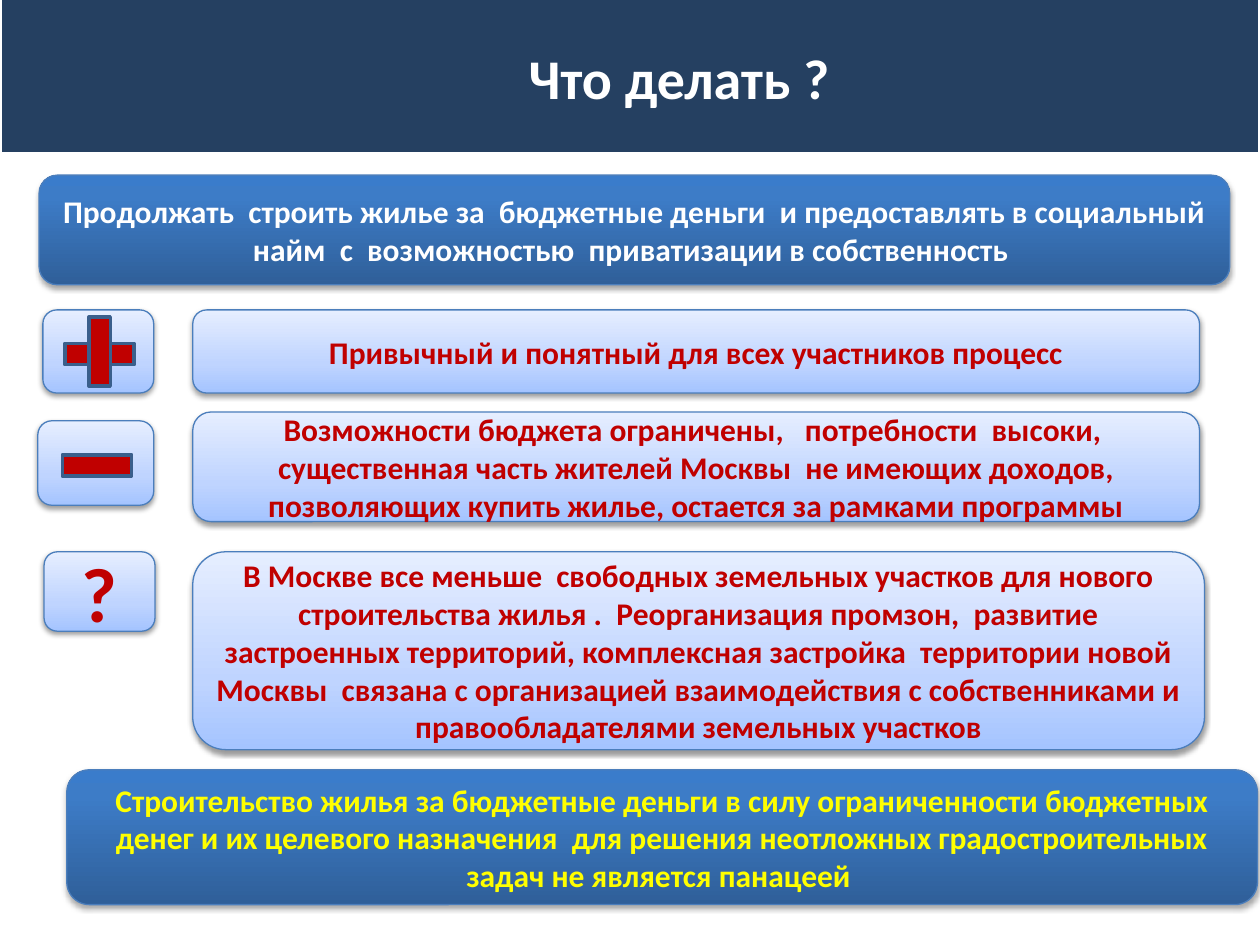
from lxml import etree
from pptx import Presentation
from pptx import util as u
from pptx.dml.color import RGBColor
from pptx.enum import shapes, text
from pptx.oxml import ns

COLORS = {
    "band": "254061", "white": "FFFFFF", "yellow": "FFFF00", "red": "C00000",
    "glyph_edge": "3A5F8C", "card_edge": "4B7EBC", "question_edge": "D73A36",
    "shadow": "000000",
}
# Gradient stops (percent, colour) from bottom to top, then shadow opacity and distance
BLUE = ([(0, "2F5F99"), (80, "3D7CC7"), (100, "3A7CCB")], 35, 1.8)
PALE = ([(0, "A4C4FF"), (35, "BFD4FF"), (100, "E6EEFF")], 38, 1.6)
FONT = "Calibri"
GLYPH_WIDTH, GLYPH_THICKNESS = 0.55, 0.17


def rgb(name):
    return RGBColor.from_string(COLORS[name])


def add_xml(parent, tag, **attributes):
    return etree.SubElement(parent, ns.qn(tag), attributes)


def add_color(parent, value):
    return add_xml(parent, "a:srgbClr", val=value)


def add_box(slide, preset, box, edge, edge_width):
    shape = slide.shapes.add_shape(preset, *map(u.Inches, box))
    shape.shadow.inherit = False
    shape.line.color.rgb = rgb(edge)
    shape.line.width = u.Pt(edge_width)
    return shape


def add_bar(slide, box, fill, edge):
    bar = add_box(slide, shapes.MSO_SHAPE.RECTANGLE, box, edge, 2)
    bar.fill.solid()
    bar.fill.fore_color.rgb = rgb(fill)
    return bar


def write(frame, words, color, size):
    frame.word_wrap = True
    frame.vertical_anchor = text.MSO_ANCHOR.MIDDLE
    paragraph = frame.paragraphs[0]
    paragraph.text = words
    paragraph.alignment = text.PP_ALIGN.CENTER
    font = paragraph.font
    font.name, font.size, font.bold = FONT, u.Pt(size), True
    font.color.rgb = rgb(color)
    return paragraph


def add_card(slide, box, style):
    """Rounded card with a vertical gradient and a soft shadow below."""
    stops, opacity, distance = style
    card = add_box(slide, shapes.MSO_SHAPE.ROUNDED_RECTANGLE, box, "card_edge", 0.75)
    card.fill.gradient()
    card.fill.gradient_angle = 90
    properties = card._element.spPr
    stop_list = properties.find(".//" + ns.qn("a:gsLst"))
    for old_stop in list(stop_list):
        stop_list.remove(old_stop)
    for percent, value in stops:
        add_color(add_xml(stop_list, "a:gs", pos=str(percent * 1000)), value)
    shadow = add_xml(properties.find(ns.qn("a:effectLst")), "a:outerShdw",
                     blurRad=str(u.Pt(3.1)), dist=str(u.Pt(distance)),
                     dir="5400000", rotWithShape="0")
    add_xml(add_color(shadow, COLORS["shadow"]), "a:alpha", val=str(opacity * 1000))
    return card


def add_header(slide, box, words):
    left, top, width, height = box
    band = add_bar(slide, box, "band", "white")
    title = slide.shapes.title
    title._element.addprevious(band._element)
    title.left, title.top = u.Inches(left + 1.06), u.Inches(top + 0.32)
    title.width, title.height = u.Inches(8.66), u.Inches(0.64)
    write(title.text_frame, words, "white", 32)


def add_banner(slide, box, words, color):
    write(add_card(slide, box, BLUE).text_frame, words, color, 18)


def add_minus(slide, box, rotation=0):
    left, top, width, height = box
    glyph_box = (left + (width - GLYPH_WIDTH) / 2 + 0.01,
                 top + (height - GLYPH_THICKNESS) / 2 + 0.02,
                 GLYPH_WIDTH, GLYPH_THICKNESS)
    add_bar(slide, glyph_box, "red", "glyph_edge").rotation = rotation


def add_plus(slide, box):
    left, top, width, height = box
    add_minus(slide, box)
    add_minus(slide, (left, top - 0.02, width, height), 90)


def add_question(slide, box):
    mark = slide.shapes[-1]
    paragraph = write(mark.text_frame, "?", "red", 44)
    outline = etree.Element(ns.qn("a:ln"), w=str(u.Pt(1.42)))
    add_color(add_xml(outline, "a:solidFill"), COLORS["question_edge"])
    paragraph.runs[0]._r.get_or_add_rPr().insert(0, outline)


def add_argument(slide, sign_box, add_sign, text_box, words):
    """Sign card on the left and its statement card on the right."""
    add_card(slide, sign_box, PALE)
    add_sign(slide, sign_box)
    write(add_card(slide, text_box, PALE).text_frame, words, "red", 18)


ARGUMENTS = [
    ((0.34, 2.46, 0.88, 0.66), add_plus, (1.53, 2.46, 7.99, 0.66),
     "Привычный и понятный для всех участников процесс"),
    ((0.3, 3.34, 0.92, 0.67), add_minus, (1.53, 3.27, 7.99, 0.87),
     "Возможности бюджета ограничены,   потребности  высоки,  существенная часть "
     "жителей Москвы  не имеющих доходов, позволяющих купить жилье, остается за "
     "рамками программы"),
    ((0.35, 4.38, 0.88, 0.63), add_question, (1.53, 4.38, 8.03, 1.57),
     "В Москве все меньше  свободных земельных участков для нового строительства "
     "жилья .  Реорганизация промзон,  развитие застроенных территорий, комплексная "
     "застройка  территории новой Москвы  связана с организацией взаимодействия с "
     "собственниками и правообладателями земельных участков"),
]


def main():
    deck = Presentation()
    deck.slide_width, deck.slide_height = u.Inches(10), u.Inches(7.5)
    slide = deck.slides.add_slide(deck.slide_layouts.get_by_name("Title Only"))
    add_header(slide, (0, -0.03, 10, 1.25), "Что делать ?")
    add_banner(slide, (0.31, 1.39, 9.45, 0.87),
               "Продолжать  строить жилье за  бюджетные деньги  и предоставлять в "
               "социальный найм  с  возможностью  приватизации в собственность ", "white")
    for argument in ARGUMENTS:
        add_argument(slide, *argument)
    add_banner(slide, (0.53, 6.11, 9.45, 1.07),
               "Строительство жилья за бюджетные деньги в силу ограниченности бюджетных "
               "денег и их целевого назначения  для решения неотложных "
               "градостроительных задач не является панацеей ", "yellow")
    deck.save("out.pptx")


if __name__ == "__main__":
    main()
